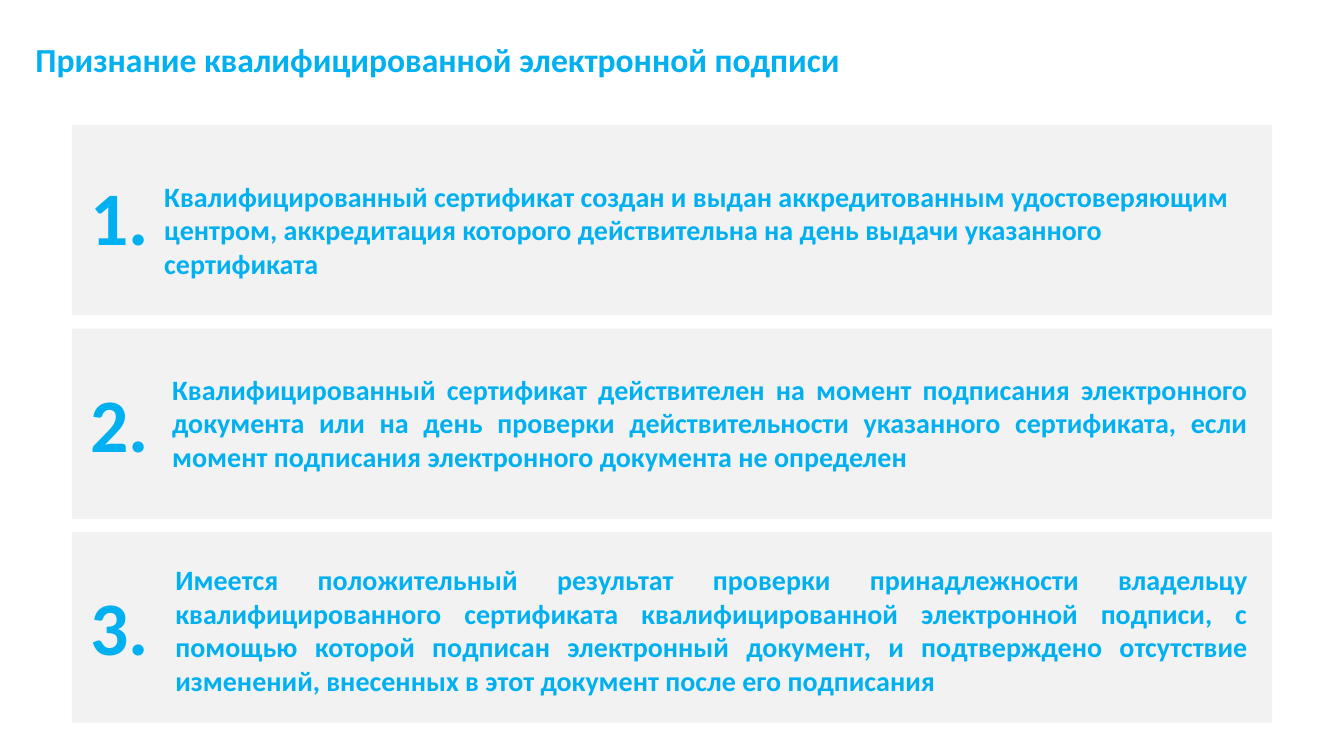
from pptx import Presentation
from pptx.dml.color import RGBColor
from pptx.enum.shapes import MSO_SHAPE
from pptx.enum.text import MSO_ANCHOR, PP_ALIGN
from pptx.util import Cm, Pt

RECT = MSO_SHAPE.RECTANGLE
TOP, MIDDLE = MSO_ANCHOR.TOP, MSO_ANCHOR.MIDDLE
LEFT, JUSTIFY = PP_ALIGN.LEFT, PP_ALIGN.JUSTIFY

COLORS = {"panel": "F2F2F2", "text": "00B0F0"}
FONT = "Calibri"
PANEL_TOP, PANEL_PITCH = 3.15, 5.13

TITLE = "Признание квалифицированной электронной подписи"
CONDITIONS = [
    ("Квалифицированный сертификат создан и выдан аккредитованным "
     "удостоверяющим центром, аккредитация которого действительна на день "
     "выдачи указанного сертификата",
     3.73, (3.89, 4.39, 28.17, 2.79), LEFT),
    ("Квалифицированный сертификат действителен на момент подписания "
     "электронного документа или на день проверки действительности "
     "указанного сертификата, если момент подписания электронного документа "
     "не определен",
     8.94, (4.09, 9.25, 27.61, 2.79), JUSTIFY),
    ("Имеется положительный результат проверки принадлежности владельцу "
     "квалифицированного сертификата квалифицированной электронной подписи, "
     "с помощью которой подписан электронный документ, и подтверждено "
     "отсутствие изменений, внесенных в этот документ после его подписания",
     14.05, (4.17, 14.05, 27.53, 3.63), JUSTIFY),
]


def color(name):
    return RGBColor.from_string(COLORS[name])


def write(sp, text, size=20, align=LEFT, anchor=TOP, spacing=1.0):
    tf = sp.text_frame
    tf.word_wrap = True
    tf.vertical_anchor = anchor
    p = tf.paragraphs[0]
    p.alignment = align
    p.line_spacing = spacing
    r = p.add_run()
    r.text = text
    r.font.name = FONT
    r.font.size = Pt(size)
    r.font.bold = True
    r.font.color.rgb = color("text")


def add_title(s, text):
    sp = s.shapes.title
    sp.left, sp.top, sp.width, sp.height = Cm(0.64), Cm(-0.28), Cm(32.59), Cm(3.68)
    write(sp, text, size=24, anchor=MIDDLE, spacing=0.9)


def add_panel(s, top):
    sp = s.shapes.add_shape(RECT, Cm(1.81), Cm(top), Cm(30.25), Cm(4.8))
    sp.shadow.inherit = False
    sp.fill.solid()
    sp.fill.fore_color.rgb = color("panel")
    sp.line.fill.background()


def add_text(s, text, box, **fmt):
    sp = s.shapes.add_textbox(*map(Cm, box))
    write(sp, text, **fmt)


def main():
    prs = Presentation()
    prs.slide_width, prs.slide_height = Cm(33.87), Cm(19.05)
    s = prs.slides.add_slide(prs.slide_layouts[5])
    add_title(s, TITLE)
    for i, (text, number_top, box, align) in enumerate(CONDITIONS):
        add_panel(s, PANEL_TOP + i * PANEL_PITCH)
        add_text(s, f"{i + 1}.", (2.02, number_top, 2.21, 3.68),
                 size=54, anchor=MIDDLE, spacing=0.9)
        add_text(s, text, box, align=align)
    prs.save("out.pptx")


if __name__ == "__main__":
    main()
